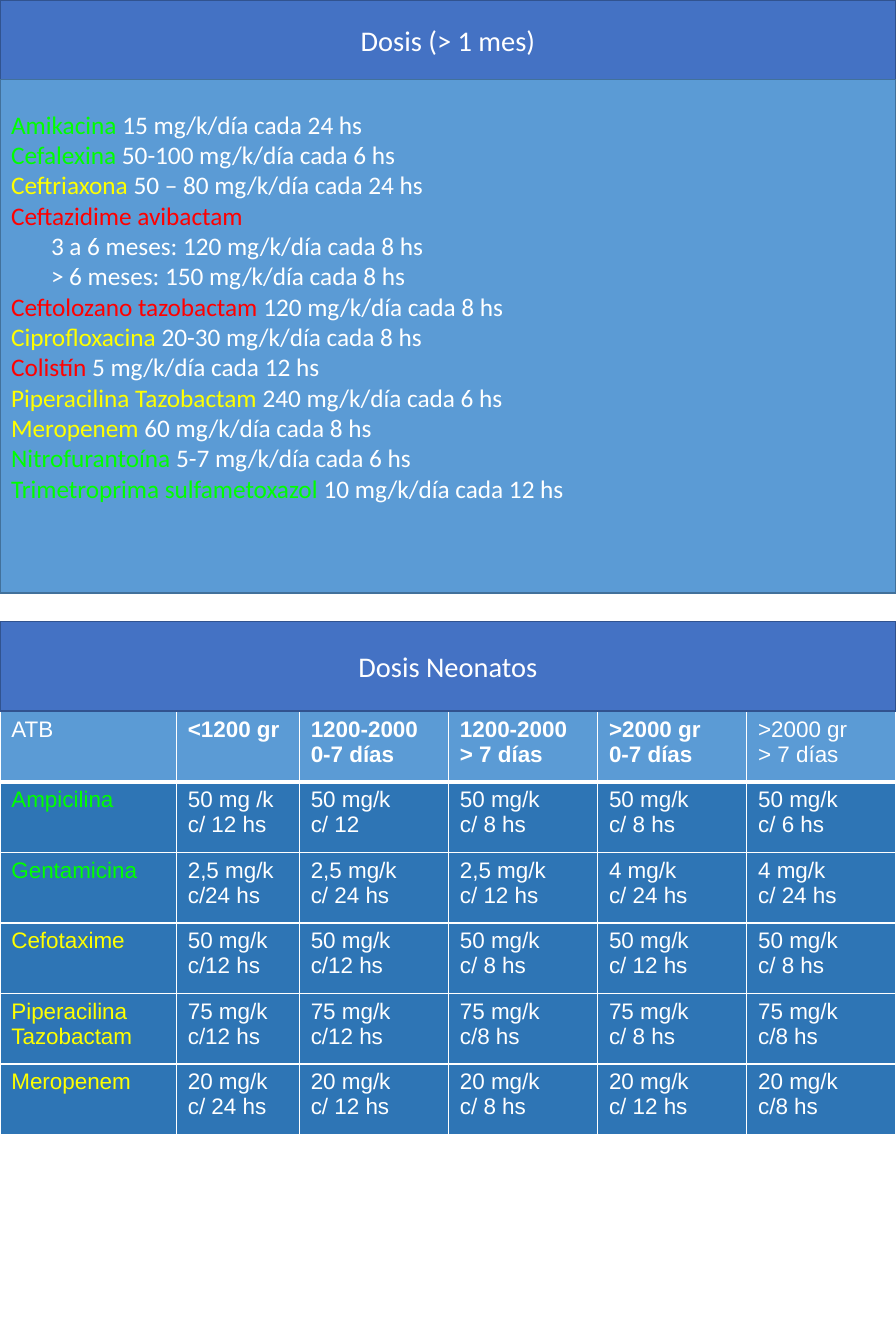
from pptx import Presentation
from pptx import util as u
from pptx.dml.color import RGBColor
from pptx.enum import shapes, text
from pptx.oxml import parse_xml
from pptx.oxml.ns import nsdecls

WHITE = RGBColor(0xFF, 0xFF, 0xFF)
GREEN = RGBColor(0x00, 0xFF, 0x00)
YELLOW = RGBColor(0xFF, 0xFF, 0x00)
RED = RGBColor(0xFF, 0x00, 0x00)
BANNER = RGBColor(0x44, 0x72, 0xC4)
BANNER_EDGE = RGBColor(0x31, 0x53, 0x8F)
PANEL = RGBColor(0x5B, 0x9B, 0xD5)
PANEL_EDGE = RGBColor(0x42, 0x71, 0x9B)
CELL = RGBColor(0x2E, 0x75, 0xB5)

WIDTH = 7.87
DOSES = [
    ("Amikacina", GREEN, " 15 mg/k/día cada 24 hs"),
    ("Cefalexina", GREEN, " 50-100 mg/k/día cada 6 hs"),
    ("Ceftriaxona", YELLOW, " 50 – 80 mg/k/día cada 24 hs"),
    ("Ceftazidime avibactam", RED, ""),
    ("", WHITE, "3 a 6 meses: 120 mg/k/día cada 8 hs"),
    ("", WHITE, "> 6 meses: 150 mg/k/día cada 8 hs"),
    ("Ceftolozano tazobactam", RED, " 120 mg/k/día cada 8 hs"),
    ("Ciprofloxacina", YELLOW, " 20-30 mg/k/día cada 8 hs"),
    ("Colistín", RED, " 5 mg/k/día cada 12 hs"),
    ("Piperacilina Tazobactam", YELLOW, " 240 mg/k/día cada 6 hs"),
    ("Meropenem", YELLOW, " 60 mg/k/día cada 8 hs"),
    ("Nitrofurantoína", GREEN, " 5-7 mg/k/día cada 6 hs"),
    ("Trimetroprima sulfametoxazol", GREEN, " 10 mg/k/día cada 12 hs"),
]
COLUMNS = [1.55, 1.08] + [1.31] * 4
HEADER = ["ATB", "<1200 gr", "1200-2000\n0-7 días", "1200-2000\n> 7 días",
          ">2000 gr\n0-7 días", ">2000 gr\n> 7 días"]
NEONATES = [
    ("Ampicilina", GREEN, ["50 mg /k\nc/ 12 hs", "50 mg/k\nc/ 12", "50 mg/k\nc/ 8 hs",
                           "50 mg/k\nc/ 8 hs", "50 mg/k\nc/ 6 hs"]),
    ("Gentamicina", GREEN, ["2,5 mg/k\nc/24 hs", "2,5 mg/k\nc/ 24 hs", "2,5 mg/k\nc/ 12 hs",
                            "4 mg/k\nc/ 24 hs", "4 mg/k\nc/ 24 hs"]),
    ("Cefotaxime", YELLOW, ["50 mg/k\nc/12 hs", "50 mg/k\nc/12 hs", "50 mg/k\nc/ 8 hs",
                            "50 mg/k\nc/ 12 hs", "50 mg/k\nc/ 8 hs"]),
    ("Piperacilina\nTazobactam", YELLOW, ["75 mg/k\nc/12 hs", "75 mg/k\nc/12 hs", "75 mg/k\nc/8 hs",
                                          "75 mg/k\nc/ 8 hs", "75 mg/k\nc/8 hs"]),
    ("Meropenem", YELLOW, ["20 mg/k\nc/ 24 hs", "20 mg/k\nc/ 12 hs", "20 mg/k\nc/ 8 hs",
                           "20 mg/k\nc/ 12 hs", "20 mg/k\nc/8 hs"]),
]


def write(para, content, size=18, font="Calibri", color=WHITE, bold=False,
          align=text.PP_ALIGN.LEFT):
    para.alignment = align
    span = para.add_run()
    span.text = content
    span.font.size = u.Pt(size)
    span.font.name = font
    span.font.bold = bold
    span.font.color.rgb = color


def paragraph(frame, index):
    return frame.paragraphs[0] if index == 0 else frame.add_paragraph()


class DoseSlide:
    def __init__(self, deck):
        self.slide = deck.slides.add_slide(deck.slide_layouts[5])

    def format_box(self, box, top, height, fill, edge):
        box.left, box.top = u.Inches(0), u.Inches(top)
        box.width, box.height = u.Inches(WIDTH), u.Inches(height)
        box.shadow.inherit = False
        box.fill.solid()
        box.fill.fore_color.rgb = fill
        box.line.color.rgb = edge
        box.line.width = u.Pt(1)
        frame = box.text_frame
        frame.word_wrap = True
        frame.auto_size = text.MSO_AUTO_SIZE.NONE
        frame.vertical_anchor = text.MSO_ANCHOR.MIDDLE
        frame.margin_left = frame.margin_right = u.Inches(0.1)
        frame.margin_top = frame.margin_bottom = u.Inches(0.05)
        return frame

    def rectangle(self):
        return self.slide.shapes.add_shape(shapes.MSO_SHAPE.RECTANGLE, 0, 0, 0, 0)

    def banner(self, box, content, top, height):
        frame = self.format_box(box, top, height, BANNER, BANNER_EDGE)
        write(frame.paragraphs[0], content, align=text.PP_ALIGN.CENTER)

    def dose_panel(self, top, height):
        frame = self.format_box(self.rectangle(), top, height, PANEL, PANEL_EDGE)
        frame.margin_bottom = u.Inches(0.58)
        for index, (drug, color, dose) in enumerate(DOSES):
            para = paragraph(frame, index)
            if drug:
                write(para, drug, size=16, color=color)
            else:
                para._p.get_or_add_pPr().set("marL", str(u.Inches(0.35)))
            if dose:
                write(para, dose, size=16)

    def cell(self, cell, content, fill, bottom=1, **style):
        properties = cell._tc.get_or_add_tcPr()
        for side, width in (("L", 1), ("R", 1), ("T", 1), ("B", bottom)):
            properties.append(parse_xml(
                f'<a:ln{side} {nsdecls("a")} w="{u.Pt(width)}"><a:solidFill>'
                f'<a:srgbClr val="{WHITE}"/></a:solidFill></a:ln{side}>'))
        cell.fill.solid()
        cell.fill.fore_color.rgb = fill
        cell.margin_left = cell.margin_right = u.Inches(0.1)
        cell.margin_top = cell.margin_bottom = u.Inches(0.05)
        for index, line in enumerate(content.split("\n")):
            write(paragraph(cell.text_frame, index), line, size=14.2, font="Arial", **style)

    def neonate_table(self, top, row_height):
        rows = len(NEONATES) + 1
        table = self.slide.shapes.add_table(
            rows, len(COLUMNS), u.Inches(0), u.Inches(top),
            u.Inches(WIDTH), u.Inches(row_height * rows)).table
        table.horz_banding = False
        for column, width in zip(table.columns, COLUMNS):
            column.width = u.Inches(width)
        for row in table.rows:
            row.height = u.Inches(row_height)
        for index, label in enumerate(HEADER):
            self.cell(table.cell(0, index), label, PANEL, bottom=3,
                      bold=0 < index < len(HEADER) - 1)
        for number, (drug, color, doses) in enumerate(NEONATES, 1):
            self.cell(table.cell(number, 0), drug, CELL, color=color)
            for index, dose in enumerate(doses, 1):
                self.cell(table.cell(number, index), dose, CELL)


def main():
    deck = Presentation()
    deck.slide_width, deck.slide_height = u.Inches(WIDTH), u.Inches(11.81)
    page = DoseSlide(deck)
    page.dose_panel(0.7, 4.51)
    page.banner(page.slide.shapes.title, "Dosis (> 1 mes)", 0, 0.7)
    page.neonate_table(6.25, 0.62)
    page.banner(page.rectangle(), "Dosis Neonatos", 5.46, 0.79)
    deck.save("out.pptx")


if __name__ == "__main__":
    main()
